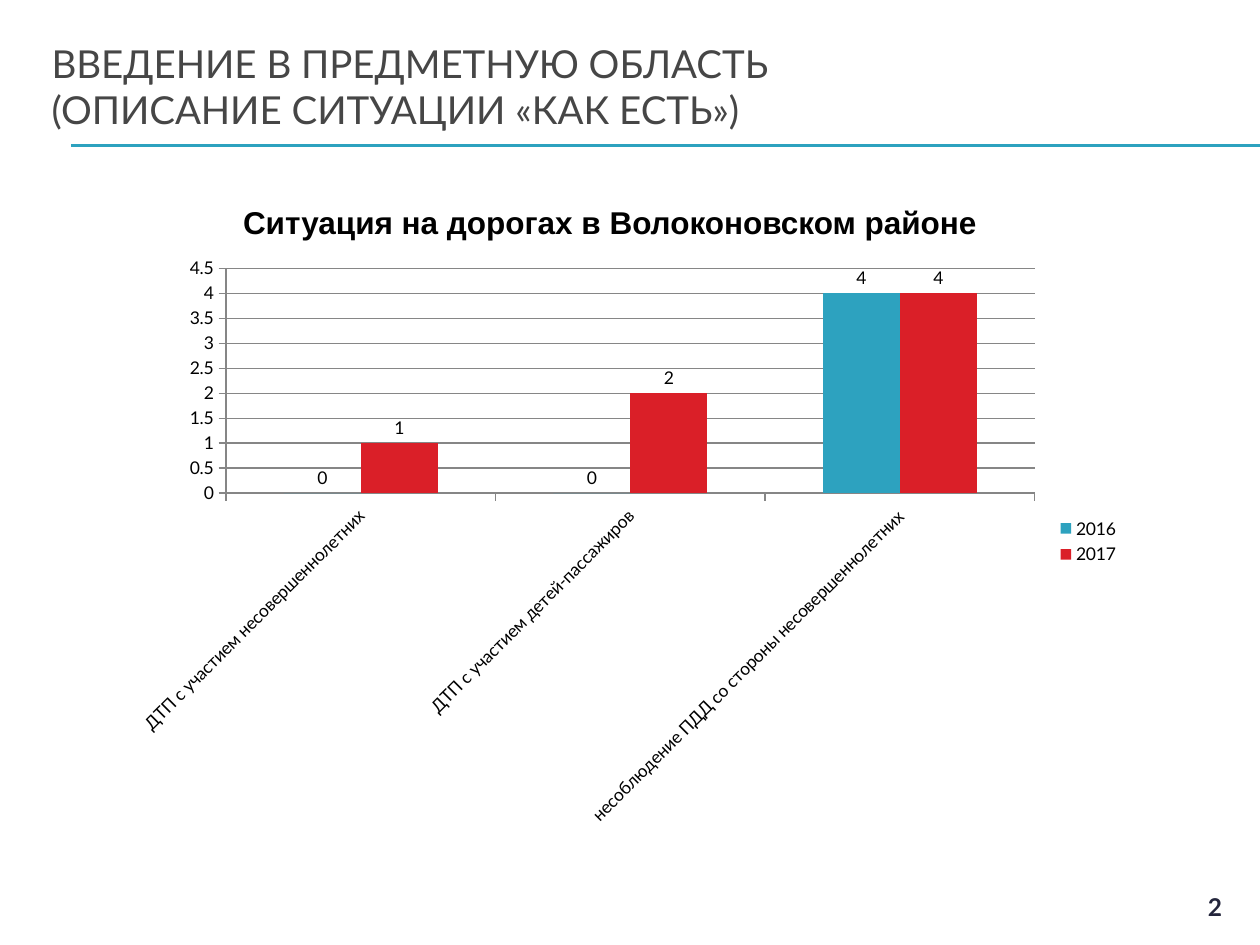
from dataclasses import dataclass

from lxml import etree
from pptx import Presentation
from pptx import util as u
from pptx.chart import data as cd
from pptx.dml.color import RGBColor
from pptx.enum import chart as ch, shapes as sh, text as tx
from pptx.oxml.ns import qn

PX = 914400 / 126
HUES = {"teal": "2DA2BF", "red": "DA1F28", "head": "464646",
        "page": "24263C", "ink": "000000", "grid": "868686"}


@dataclass
class Box:
    left: int
    top: int
    wide: int
    high: int

    def emu(self) -> list[int]:
        return [px(n) for n in (self.left, self.top, self.wide, self.high)]


@dataclass
class Label:
    text: str
    box: Box
    size: int
    face: str
    hue: str


@dataclass
class Year:
    name: str
    vals: tuple
    hue: str


RULES = (145, 146)
LABELS = (
    Label("2", Box(1191, 886, 48, 39), 14, "Lato", "page"),
    Label("Ситуация на дорогах в Волоконовском районе",
          Box(108, 197, 1004, 50), 18, "Arial", "ink"),
)
CATS = ("ДТП с участием несовершеннолетних",
        "ДТП с участием детей-пассажиров",
        "несоблюдение ПДД со стороны несовершеннолетних")
YEARS = (Year("2016", (0, 0, 4), "teal"), Year("2017", (1, 2, 4), "red"))


def px(n: int) -> int:
    return round(n * PX)


def rgb(hue: str) -> RGBColor:
    return RGBColor.from_string(HUES[hue])


def style(font, size: int, face: str, hue: str, bold: bool = False) -> None:
    font.size, font.name, font.bold = u.Pt(size), face, bold
    font.color.rgb = rgb(hue)


def add_rule(slide, y: int) -> None:
    line = slide.shapes.add_connector(
        sh.MSO_CONNECTOR.STRAIGHT, px(71), px(y), px(1260), px(y))
    line.line.color.rgb = rgb("teal")
    line.line.width = u.Pt(0.75)
    etree.SubElement(line._element.spPr, qn("a:effectLst"))


def add_title(slide, text: str) -> None:
    title = slide.shapes.title
    title.left, title.top, title.width, title.height = Box(39, 49, 1263, 116).emu()
    frame = title.text_frame
    frame.text = text
    frame.word_wrap = True
    frame.auto_size = tx.MSO_AUTO_SIZE.NONE
    frame.vertical_anchor = tx.MSO_ANCHOR.MIDDLE
    # The wider bottom margin lifts the text above the rule
    frame.margin_top, frame.margin_bottom = 0, px(42)
    for par in frame.paragraphs:
        par.alignment = tx.PP_ALIGN.LEFT
        for run in par.runs:
            style(run.font, 22, "Lato", "head")


def add_label(slide, label: Label) -> None:
    frame = slide.shapes.add_textbox(*label.box.emu()).text_frame
    frame.word_wrap = True
    frame.text = label.text
    par = frame.paragraphs[0]
    par.alignment = tx.PP_ALIGN.CENTER
    style(par.runs[0].font, label.size, label.face, label.hue, True)


def add_bars(slide, box: Box) -> None:
    data = cd.CategoryChartData()
    data.categories = CATS
    for year in YEARS:
        data.add_series(year.name, year.vals)
    chart = slide.shapes.add_chart(
        ch.XL_CHART_TYPE.COLUMN_CLUSTERED, *box.emu(), data).chart
    style(chart.font, 10, "Lato", "ink")
    chart.has_title = False
    chart.has_legend = True
    chart.legend.position = ch.XL_LEGEND_POSITION.RIGHT
    chart.legend.include_in_layout = False

    # Columns and their values
    plot = chart.plots[0]
    plot.gap_width, plot.overlap = 150, 0
    plot.vary_by_categories = False
    for bars, year in zip(plot.series, YEARS):
        bars.format.fill.solid()
        bars.format.fill.fore_color.rgb = rgb(year.hue)
        tags = bars.data_labels
        tags.show_value = True
        tags.position = ch.XL_LABEL_POSITION.OUTSIDE_END

    # Axes, with slanted category names
    cat, val = chart.category_axis, chart.value_axis
    val.has_major_gridlines = True
    val.minimum_scale, val.maximum_scale, val.major_unit = 0, 4.5, 0.5
    for part in (cat, val, val.major_gridlines):
        part.format.line.color.rgb = rgb("grid")
        part.format.line.width = u.Pt(0.75)
    for axis in (cat, val):
        axis.major_tick_mark = ch.XL_TICK_MARK.OUTSIDE
        style(axis.tick_labels.font, 10, "Lato", "ink")
    cat._element.txPr.find(qn("a:bodyPr")).set("rot", "-2700000")


def main() -> None:
    deck = Presentation()
    deck.slide_width, deck.slide_height = px(1260), px(945)
    slide = deck.slides.add_slide(deck.slide_layouts[5])
    for y in RULES:
        add_rule(slide, y)
    add_title(slide, "ВВЕДЕНИЕ В ПРЕДМЕТНУЮ ОБЛАСТЬ\n"
                     "(ОПИСАНИЕ СИТУАЦИИ «КАК ЕСТЬ»)")
    add_bars(slide, Box(118, 246, 1014, 591))
    for label in LABELS:
        add_label(slide, label)
    deck.save("out.pptx")


if __name__ == "__main__":
    main()
